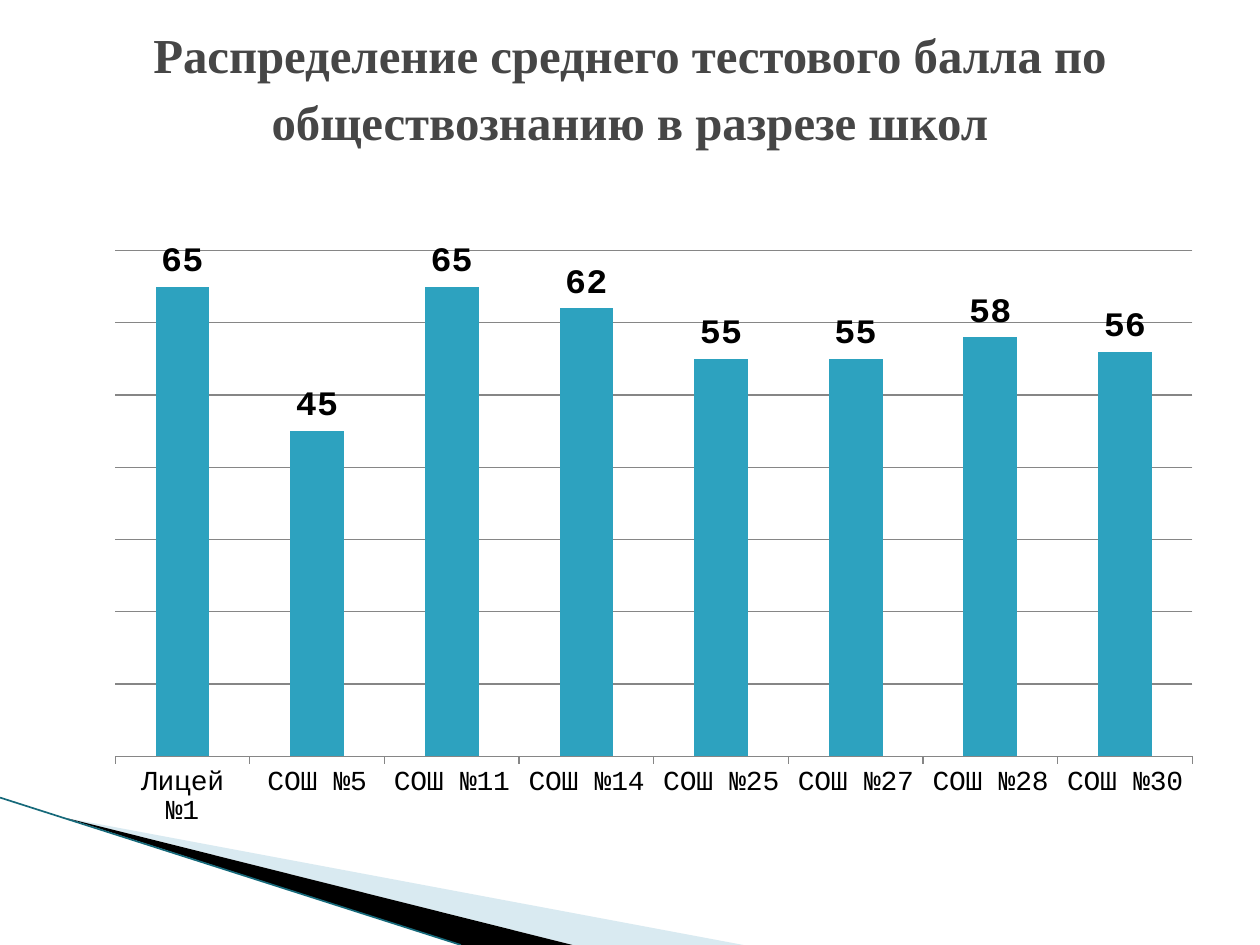
from lxml.etree import SubElement
from pptx import Presentation
from pptx.chart.data import CategoryChartData
from pptx.dml.color import RGBColor
from pptx.enum.chart import XL_CHART_TYPE, XL_LABEL_POSITION, XL_TICK_LABEL_POSITION, XL_TICK_MARK
from pptx.enum.shapes import MSO_CONNECTOR
from pptx.enum.text import MSO_ANCHOR, PP_ALIGN
from pptx.oxml import parse_xml
from pptx.oxml.ns import nsdecls, qn
from pptx.util import Inches, Pt

WIDTH, HEIGHT = 10, 7.5
COLORS = {
    "title": "464646", "text": "000000", "bar": "2DA2BF", "grid": "868686",
    "pale_wedge": "A0CBDC", "dark_wedge": "000000", "edge": "16697A",
}
SCORES = {
    "Лицей №1": 65, "СОШ №5": 45, "СОШ №11": 65, "СОШ №14": 62,
    "СОШ №25": 55, "СОШ №27": 55, "СОШ №28": 58, "СОШ №30": 56,
}
PLOT = {"x": 0.046, "y": 0.076, "w": 0.95, "h": 0.828}


def color(name):
    """Return the named palette colour."""
    return RGBColor.from_string(COLORS[name])


def format_font(font, name, size, color_name, bold=False):
    """Set the face, size, colour and weight of a font."""
    font.name, font.size, font.bold = name, Pt(size), bold
    font.color.rgb = color(color_name)


def write_text(frame, text, font, size, color_name, bold=False,
               align=PP_ALIGN.LEFT, spacing=1.0, after=0):
    """Fill a text frame with one formatted paragraph."""
    paragraph = frame.paragraphs[0]
    paragraph.alignment, paragraph.line_spacing = align, spacing
    paragraph.space_after = Pt(after)
    run = paragraph.add_run()
    run.text = text
    format_font(run.font, font, size, color_name, bold)


def add_title(slide, left, top, width, height):
    """Place the title in its box, raised by one line."""
    title = slide.shapes.title
    title.left, title.top = Inches(left), Inches(top)
    title.width, title.height = Inches(width), Inches(height)
    frame = title.text_frame
    frame.word_wrap = True
    frame.vertical_anchor = MSO_ANCHOR.MIDDLE
    frame.margin_bottom = Inches(0.58)
    write_text(frame, "Распределение среднего тестового балла по обществознанию в разрезе школ",
               font="Times New Roman", size=27.9, color_name="title", bold=True,
               align=PP_ALIGN.CENTER, spacing=1.15, after=10)


def add_wedge(slide, points, color_name, opacity=100):
    """Draw a filled outline through the points."""
    corners = [(Inches(x), Inches(y)) for x, y in points]
    builder = slide.shapes.build_freeform(*corners[0])
    builder.add_line_segments(corners[1:])
    wedge = builder.convert_to_shape()
    wedge.shadow.inherit = False
    wedge.fill.solid()
    wedge.fill.fore_color.rgb = color(color_name)
    wedge.line.fill.background()
    tint = wedge.fill._xPr.find(".//" + qn("a:srgbClr"))
    SubElement(tint, qn("a:alpha")).set("val", str(opacity * 1000))


def add_corner(slide, left, top, width, height):
    """Draw the wedges and edge line of the lower corner."""
    right, bottom = left + width, top + height
    tip = (left + 0.09 * width, top + 0.14 * height)
    add_wedge(slide, [tip, (right, bottom), (left + 0.77 * width, bottom)], "pale_wedge", 40)
    add_wedge(slide, [tip, (left + 0.77 * width, bottom), (left + 0.62 * width, bottom)], "dark_wedge")
    edge = slide.shapes.add_connector(
        MSO_CONNECTOR.STRAIGHT, Inches(left), Inches(top),
        Inches(left + 0.62 * width), Inches(bottom))
    edge.line.color.rgb = color("edge")
    edge.line.width = Pt(0.95)
    SubElement(edge._element.spPr, qn("a:effectLst"))


def fix_plot_area(chart):
    """Give the inner plot area its share of the chart."""
    plot_area = chart._chartSpace.chart.plotArea
    for layout in plot_area.findall(qn("c:layout")):
        plot_area.remove(layout)
    shares = "".join(f'<c:{key} val="{share}"/>' for key, share in PLOT.items())
    plot_area.insert(0, parse_xml(
        f'<c:layout {nsdecls("c")}><c:manualLayout><c:layoutTarget val="inner"/>'
        f'<c:xMode val="edge"/><c:yMode val="edge"/>{shares}</c:manualLayout></c:layout>'))


def add_score_chart(slide, left, top, width, height):
    """Place the column chart of average scores by school."""
    data = CategoryChartData()
    data.categories = list(SCORES)
    data.add_series("Series 1", list(SCORES.values()))
    chart = slide.shapes.add_chart(
        XL_CHART_TYPE.COLUMN_CLUSTERED, Inches(left), Inches(top),
        Inches(width), Inches(height), data).chart
    chart.has_legend = chart.has_title = False
    format_font(chart.font, "Courier New", 10, "text")
    fix_plot_area(chart)

    plot = chart.plots[0]
    plot.gap_width, plot.vary_by_categories = 150, False
    series = plot.series[0]
    series.format.fill.solid()
    series.format.fill.fore_color.rgb = color("bar")
    labels = series.data_labels
    labels.show_value = True
    labels.position = XL_LABEL_POSITION.OUTSIDE_END
    format_font(labels.font, "Courier New", 20, "text", bold=True)

    schools = chart.category_axis
    schools.major_tick_mark = XL_TICK_MARK.OUTSIDE
    schools.tick_label_position = XL_TICK_LABEL_POSITION.LOW
    format_font(schools.tick_labels.font, "Courier New", 16, "text")
    points = chart.value_axis
    points.minimum_scale, points.maximum_scale, points.major_unit = 0, 70, 10
    points.has_major_gridlines = True
    points.visible = False
    for line in (schools.format.line, points.major_gridlines.format.line):
        line.color.rgb = color("grid")
        line.width = Pt(0.75)


def main():
    """Build and save the slide."""
    presentation = Presentation()
    presentation.slide_width, presentation.slide_height = Inches(WIDTH), Inches(HEIGHT)
    slide = presentation.slides.add_slide(presentation.slide_layouts[5])
    margin = 0.05 * WIDTH
    add_corner(slide, 0, 6.33, 0.59 * WIDTH, HEIGHT - 6.33)
    add_title(slide, margin, 0.04 * HEIGHT, 0.9 * WIDTH, 1.25)
    add_score_chart(slide, margin, 1.62, 0.9 * WIDTH, 0.66 * HEIGHT)
    presentation.save("out.pptx")


if __name__ == "__main__":
    main()
